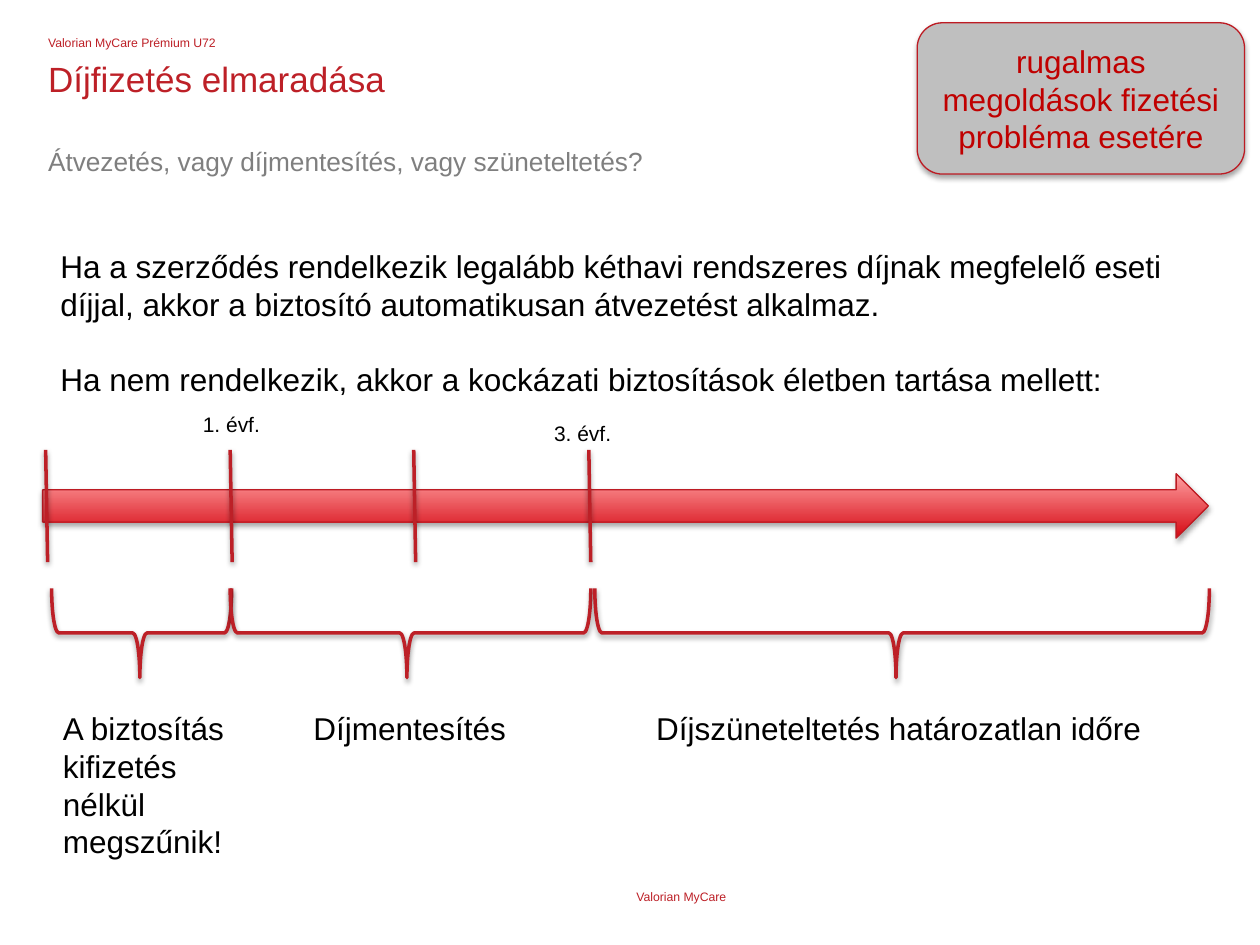
import pptx
import pptx.dml.color
import pptx.enum.shapes
import pptx.enum.text
import pptx.oxml.ns
import pptx.util
from lxml import etree

Cm, Pt = pptx.util.Cm, pptx.util.Pt
SHAPES = pptx.enum.shapes.MSO_SHAPE
RED, OUTLINE, BLACK = "BD2027", "BD1B23", "000000"

# Content: text, box (left, top, width, height in cm), size, colour, line spacing in pt
HEADINGS = [
    ("Valorian MyCare", (12.83, 17.93, 8.05, 0.3), 7, RED, None),
    ("Díjfizetés elmaradása", (0.97, 1.24, 23.29, 1.55), 20, RED, 22),
    ("Átvezetés, vagy díjmentesítés, vagy szüneteltetés?",
     (0.97, 2.97, 23.29, 1.27), 15, "7F7F7F", 17),
    ("Valorian MyCare Prémium U72", (0.97, 0.76, 6.17, 0.33), 7, RED, 7),
]
CONDITIONS = [
    "Ha a szerződés rendelkezik legalább kéthavi rendszeres díjnak megfelelő "
    "eseti díjjal, akkor a biztosító automatikusan átvezetést alkalmaz.",
    "Ha nem rendelkezik, akkor a kockázati biztosítások életben tartása mellett:",
]
# Text, box, size, wrap
LABELS = [
    ("1. évf.", (3.84, 8.18, 1.68, 0.76), 12, False),
    ("3. évf.", (10.92, 8.36, 1.68, 0.76), 12, False),
    ("A biztosítás kifizetés nélkül megszűnik!", (1.02, 14.17, 3.96, 3.33), 18, True),
    ("Díjmentesítés", (6.07, 14.17, 4.42, 1.02), 18, False),
    ("Díjszüneteltetés határozatlan időre", (12.98, 14.17, 10.39, 1.02), 18, False),
]
CALLOUT = "rugalmas megoldások fizetési probléma esetére"
TICKS = [0.92, 4.64, 8.34, 11.87]
TICK_TOP, TICK_BOTTOM, TICK_SLANT = 9.07, 11.33, 0.04
BRACES = [(1.04, 4.67), (4.64, 11.91), (11.99, 24.38)]  # left, right
BRACE_TOP, BRACE_DEPTH = 11.86, 1.8


def colour(value):
    return pptx.dml.color.RGBColor.from_string(value)


def set_values(target, **values):
    for name, value in values.items():
        setattr(target, name, value)


def write(shape, texts, size, text_colour, inset=True, wrap=True, gap=0, **paragraph_format):
    frame = shape.text_frame
    frame.word_wrap = wrap
    if not inset:
        set_values(frame, margin_left=0, margin_top=0, margin_right=0, margin_bottom=0)
    for index, text in enumerate(texts):
        paragraph = frame.add_paragraph() if index else frame.paragraphs[0]
        paragraph.text = text
        set_values(paragraph, **paragraph_format)
        if index and gap:
            paragraph.space_before = Pt(gap)
        set_values(paragraph.font, name="Arial", size=Pt(size))
        paragraph.font.color.rgb = colour(text_colour)


def add_text(slide, box, texts, size, text_colour, **options):
    shape = slide.shapes.add_textbox(*map(Cm, box))
    write(shape, texts, size, text_colour, **options)


def outline(shape, line_colour, width, opacity, distance):
    """Set the line, then the soft shadow that falls straight down."""
    shape.line.color.rgb = colour(line_colour)
    shape.line.width = Pt(width)
    qn = pptx.oxml.ns.qn
    effects = etree.SubElement(shape._element.spPr, qn("a:effectLst"))
    shadow = etree.SubElement(effects, qn("a:outerShdw"), blurRad=str(Pt(3.1)),
                              dist=str(Pt(distance)), dir="5400000", rotWithShape="0")
    black = etree.SubElement(shadow, qn("a:srgbClr"), val=BLACK)
    etree.SubElement(black, qn("a:alpha"), val=str(opacity * 1000))


def add_tick(slide, left):
    tick = slide.shapes.add_connector(
        pptx.enum.shapes.MSO_CONNECTOR.STRAIGHT,
        Cm(left), Cm(TICK_TOP), Cm(left + TICK_SLANT), Cm(TICK_BOTTOM))
    outline(tick, RED, 2, 38, 1.6)


def add_brace(slide, left, right):
    # A right brace turned a quarter: its unrotated box shares the centre
    span = right - left
    brace = slide.shapes.add_shape(
        SHAPES.RIGHT_BRACE, Cm((left + right - BRACE_DEPTH) / 2),
        Cm(BRACE_TOP + (BRACE_DEPTH - span) / 2), Cm(BRACE_DEPTH), Cm(span))
    brace.rotation = 90
    brace.adjustments[0], brace.adjustments[1] = 0.08, 0.51
    brace.fill.background()
    outline(brace, RED, 2, 38, 1.6)


def main():
    presentation = pptx.Presentation()
    set_values(presentation, slide_width=Cm(25.4), slide_height=Cm(19.05))
    slide = presentation.slides.add_slide(presentation.slide_layouts[6])

    # Headings, footer and introduction
    for text, box, size, text_colour, spacing in HEADINGS:
        add_text(slide, box, [text], size, text_colour, inset=False,
                 line_spacing=Pt(spacing) if spacing else None)
    add_text(slide, (0.97, 4.85, 23.29, 3.33), CONDITIONS, 18, BLACK, gap=21.5)

    # Timeline
    arrow = slide.shapes.add_shape(SHAPES.RIGHT_ARROW, Cm(0.86), Cm(9.55), Cm(23.5), Cm(1.3))
    arrow.fill.gradient()
    arrow.fill.gradient_angle = 90
    for stop, stop_colour in zip(arrow.fill.gradient_stops, ("D50812", "FF9FA1")):
        stop.color.rgb = colour(stop_colour)
    outline(arrow, OUTLINE, 0.75, 35, 1.8)
    for left in TICKS:
        add_tick(slide, left)
    for left, right in BRACES:
        add_brace(slide, left, right)
    for text, box, size, wrap in LABELS:
        add_text(slide, box, [text], size, BLACK, wrap=wrap)

    # Callout
    callout = slide.shapes.add_shape(
        SHAPES.ROUNDED_RECTANGLE, Cm(18.49), Cm(0.46), Cm(6.6), Cm(3.05))
    callout.fill.solid()
    callout.fill.fore_color.rgb = colour("BFBFBF")
    outline(callout, OUTLINE, 0.75, 35, 1.8)
    callout.text_frame.vertical_anchor = pptx.enum.text.MSO_ANCHOR.MIDDLE
    write(callout, [CALLOUT], 18, "C00000", alignment=pptx.enum.text.PP_ALIGN.CENTER)

    presentation.save("out.pptx")


if __name__ == "__main__":
    main()
